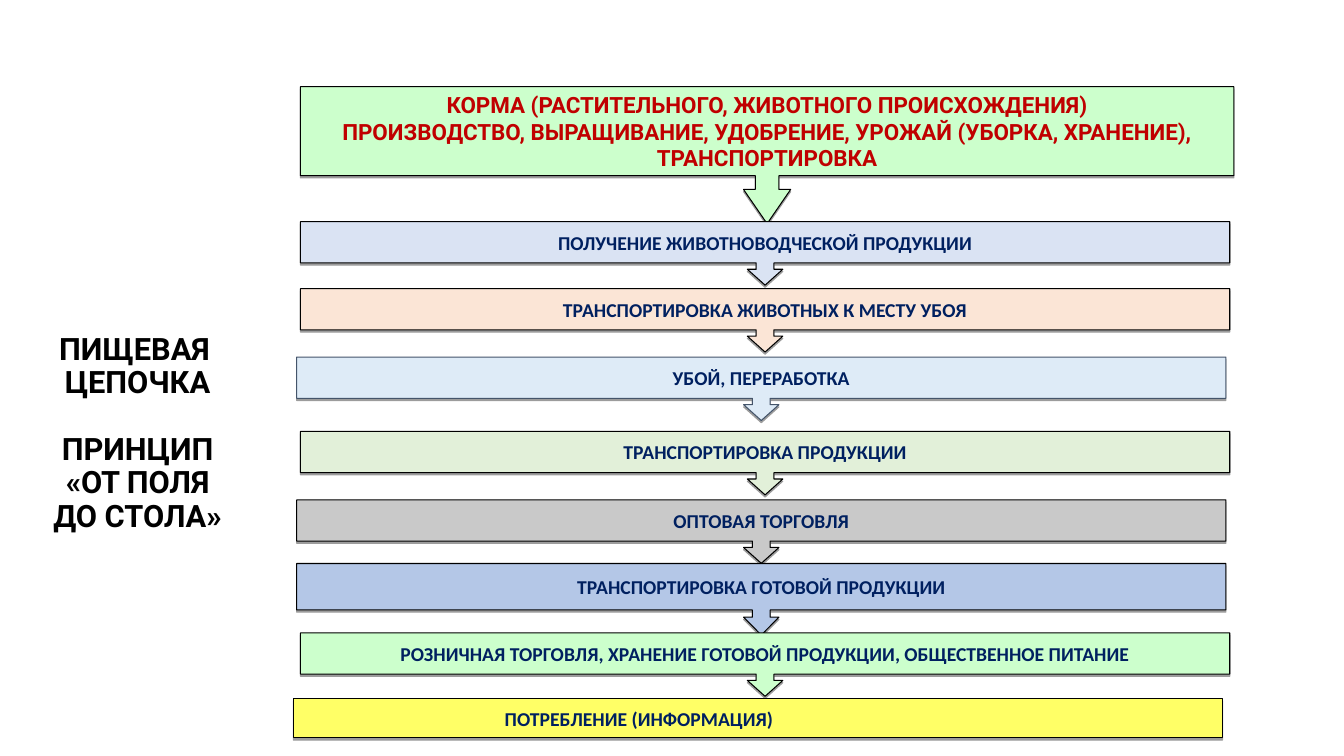
from lxml.etree import SubElement
from pptx import Presentation
from pptx.dml.color import RGBColor
from pptx.enum.shapes import MSO_SHAPE
from pptx.enum.text import MSO_ANCHOR, PP_ALIGN
from pptx.oxml.ns import qn
from pptx.util import Pt

THEME = {
    "black": "000000", "slate": "44546A", "mint": "CCFFCC", "lavender": "DAE3F3",
    "peach": "FBE5D6", "sky": "DEEBF7", "sage": "E2F0D9", "grey": "C9C9C9",
    "blue": "B4C7E7", "yellow": "FFFF66",
    "feed": {"name": "Roboto", "size": Pt(16), "bold": True, "color": "C00000"},
    "stage": {"name": "Calibri", "size": Pt(14), "bold": True, "color": "002060"},
    "title": {"name": "Roboto", "size": Pt(22), "bold": True, "color": "000000"},
}


def write_text(shape, lines, style):
    frame = shape.text_frame
    frame.word_wrap = True
    frame.vertical_anchor = MSO_ANCHOR.MIDDLE
    frame.text = "\n".join(lines)
    for paragraph in frame.paragraphs:
        paragraph.alignment = PP_ALIGN.CENTER
        for name, value in style.items():
            if name == "color":
                paragraph.font.color.rgb = RGBColor.from_string(value)
            else:
                setattr(paragraph.font, name, value)
    return frame


def add_box(kind, left, top, width, height, fill, line):
    shape = slide.shapes.add_shape(kind, Pt(left), Pt(top), Pt(width), Pt(height))
    shape.fill.solid()
    shape.fill.fore_color.rgb = RGBColor.from_string(THEME[fill])
    shape.line.color.rgb = RGBColor.from_string(THEME[line])
    shape.line.width = Pt(0.75)
    # Thin shadow straight below the box
    shape.shadow.inherit = False
    effects = shape.element.spPr.find(qn("a:effectLst"))
    shadow = SubElement(effects, qn("a:outerShdw"), blurRad="0", dist=str(Pt(1.6)),
                        dir="5400000", algn="ctr", rotWithShape="0")
    color = SubElement(shadow, qn("a:srgbClr"), val=THEME["black"])
    SubElement(color, qn("a:alpha"), val="38000")
    return shape


presentation = Presentation()
presentation.slide_width = Pt(960)
presentation.slide_height = Pt(540)
slide = presentation.slides.add_slide(presentation.slide_layouts[6])

# Stages of the food chain: left, top, width, height, arrow half width, fill, line, style, lines
WIDTH, HEIGHT, ARROW = 663.8, 45.3, 12.66
stages = [
    (214.6, 61.9, 666.7, 97.9, 16.84, "mint", "black", "feed",
     ["КОРМА (РАСТИТЕЛЬНОГО, ЖИВОТНОГО ПРОИСХОЖДЕНИЯ)",
      "ПРОИЗВОДСТВО, ВЫРАЩИВАНИЕ, УДОБРЕНИЕ, УРОЖАЙ (УБОРКА, ХРАНЕНИЕ), ТРАНСПОРТИРОВКА"]),
    (214.6, 158.4, WIDTH, HEIGHT, ARROW, "lavender", "black", "stage",
     ["ПОЛУЧЕНИЕ ЖИВОТНОВОДЧЕСКОЙ ПРОДУКЦИИ"]),
    (214.6, 206.2, WIDTH, HEIGHT, ARROW, "peach", "black", "stage",
     ["ТРАНСПОРТИРОВКА ЖИВОТНЫХ К МЕСТУ УБОЯ"]),
    (211.9, 255.1, WIDTH, HEIGHT, ARROW, "sky", "slate", "stage",
     ["УБОЙ, ПЕРЕРАБОТКА"]),
    (214.6, 308.2, WIDTH, HEIGHT, ARROW, "sage", "black", "stage",
     ["ТРАНСПОРТИРОВКА ПРОДУКЦИИ"]),
    (211.9, 357.1, WIDTH, HEIGHT, ARROW, "grey", "black", "stage",
     ["ОПТОВАЯ ТОРГОВЛЯ"]),
    (211.9, 402.5, WIDTH, 51.1, ARROW, "blue", "black", "stage",
     ["ТРАНСПОРТИРОВКА ГОТОВОЙ ПРОДУКЦИИ"]),
    (214.6, 452.1, WIDTH, HEIGHT, ARROW, "mint", "black", "stage",
     ["РОЗНИЧНАЯ ТОРГОВЛЯ, ХРАНЕНИЕ ГОТОВОЙ ПРОДУКЦИИ, ОБЩЕСТВЕННОЕ ПИТАНИЕ"]),
]
for left, top, width, height, arrow, fill, line, style, lines in stages:
    callout = add_box(MSO_SHAPE.DOWN_ARROW_CALLOUT, left, top, width, height, fill, line)
    for index, ratio in enumerate([arrow / height, arrow / height, 0.25, 0.65]):
        callout.adjustments[index] = ratio
    write_text(callout, lines, THEME[style])

# Last stage, its text set left of centre
consumption = add_box(MSO_SHAPE.RECTANGLE, 209.5, 499, WIDTH, 28.1, "yellow", "black")
frame = write_text(consumption, ["ПОТРЕБЛЕНИЕ (ИНФОРМАЦИЯ)"], THEME["stage"])
frame.margin_right = Pt(177)

# Title at the left
title = slide.shapes.add_textbox(Pt(18.7), Pt(166.3), Pt(154.8), Pt(287.3))
frame = write_text(title, ["ПИЩЕВАЯ ЦЕПОЧКА", "ПРИНЦИП «ОТ ПОЛЯ ДО СТОЛА»"], THEME["title"])
for paragraph in frame.paragraphs:
    paragraph.line_spacing = 0.9
    paragraph._p.get_or_add_pPr().set("marL", str(Pt(4.3)))
frame.paragraphs[0]._p.pPr.set("indent", str(Pt(-4.3)))
frame.paragraphs[1].space_before = Pt(24)

presentation.save("out.pptx")
